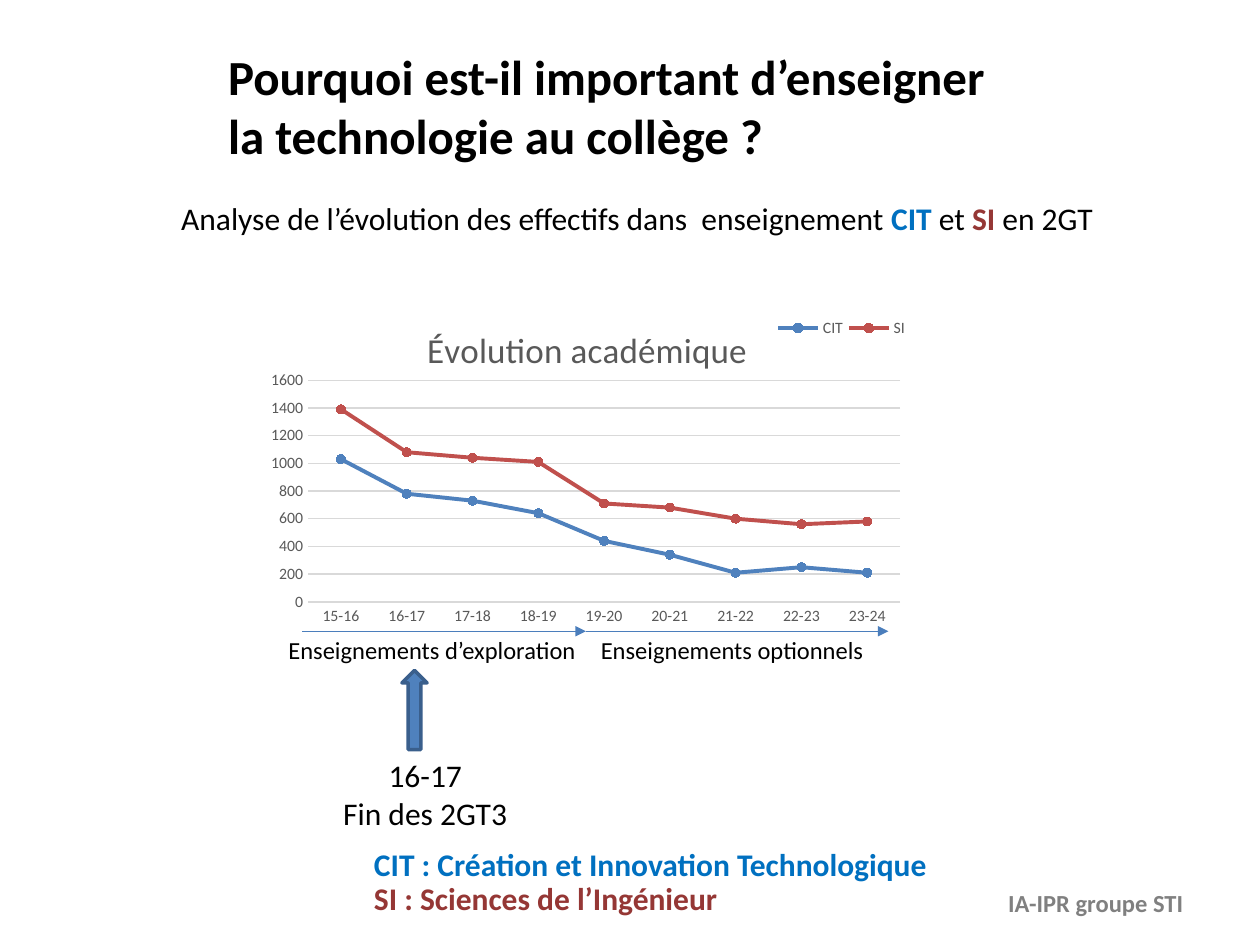
from dataclasses import dataclass

from pptx import Presentation
from pptx import util as u
from pptx.chart.data import CategoryChartData
from pptx.dml.color import RGBColor
from pptx.enum import chart as kinds, shapes, text
from pptx.oxml import parse_xml
from pptx.oxml.ns import nsdecls, qn

COLUMNS, ROWS = 100, 75
CELL = u.Inches(10) // COLUMNS
FONT = "Calibri"
BLACK = RGBColor(0x00, 0x00, 0x00)
GREY = RGBColor(0x80, 0x80, 0x80)
DARK_GREY = RGBColor(0x59, 0x59, 0x59)
LIGHT_GREY = RGBColor(0xD9, 0xD9, 0xD9)
CIT_TEXT = RGBColor(0x00, 0x70, 0xC0)
SI_TEXT = RGBColor(0x95, 0x37, 0x35)
BLUE = RGBColor(0x4F, 0x81, 0xBD)
RED = RGBColor(0xC0, 0x50, 0x4D)
ARROW_EDGE = RGBColor(0x3A, 0x5F, 0x8C)
ARROW_LINE = RGBColor(0x4B, 0x7E, 0xBC)

YEARS = [f"{year}-{year + 1}" for year in range(15, 24)]
SERIES = [
    ("CIT", BLUE, [1030, 780, 730, 640, 440, 340, 210, 250, 210]),
    ("SI", RED, [1390, 1080, 1040, 1010, 710, 680, 600, 560, 580]),
]


@dataclass
class Box:
    left: float
    top: float
    width: float
    height: float

    def inside(self, left, top, width, height):
        return Box(self.left + left, self.top + top, width, height)

    def place(self):
        return [round(cells * CELL) for cells in (self.left, self.top, self.width, self.height)]


def style_font(font, size, color, bold=False):
    font.name = FONT
    font.size = u.Pt(size)
    font.bold = bold
    font.color.rgb = color


def write(frame, paragraphs, size, align=text.PP_ALIGN.LEFT):
    for index, runs in enumerate(paragraphs):
        para = frame.add_paragraph() if index else frame.paragraphs[0]
        para.alignment = align
        for words, color, bold in runs:
            span = para.add_run()
            span.text = words
            style_font(span.font, size, color, bold)


def add_text(page, box, paragraphs, size, align=text.PP_ALIGN.LEFT):
    frame = page.shapes.add_textbox(*box.place()).text_frame
    frame.word_wrap = True
    write(frame, paragraphs, size, align)


def add_heading(page, box):
    title = page.shapes.title
    title.left, title.top, title.width, title.height = box.inside(3.7, 0, 72.4, 10.4).place()
    title.text_frame.auto_size = text.MSO_AUTO_SIZE.NONE
    title.text_frame.vertical_anchor = text.MSO_ANCHOR.TOP
    lines = ["Pourquoi est-il important d’enseigner", "la technologie au collège ?"]
    write(title.text_frame, [[(line, BLACK, True)] for line in lines], 28)
    subtitle = [
        ("Analyse de l’évolution des effectifs dans  enseignement ", BLACK, False),
        ("CIT", CIT_TEXT, True),
        (" et ", BLACK, False),
        ("SI", SI_TEXT, True),
        (" en 2GT", BLACK, False),
    ]
    add_text(page, box.inside(0, 12.1, box.width, 4), [subtitle], 18)


def set_layout(element, box, left, top, width=None, height=None, inner=False):
    shares = {"x": left / box.width, "y": top / box.height}
    if width:
        shares.update(w=width / box.width, h=height / box.height)
    target = '<c:layoutTarget val="inner"/>' if inner else ""
    modes = '<c:xMode val="edge"/><c:yMode val="edge"/>'
    values = "".join(f'<c:{name} val="{share:.4f}"/>' for name, share in shares.items())
    layout = parse_xml(
        f'<c:layout {nsdecls("c")}><c:manualLayout>{target}{modes}{values}</c:manualLayout></c:layout>'
    )
    for old in element.findall(qn("c:layout")):
        element.remove(old)
    before = [qn("c:tx"), qn("c:legendPos")]
    index = sum(child.tag in before for child in element)
    element.insert(index, layout)


def style_axes(chart):
    for axis in (chart.category_axis, chart.value_axis):
        axis.major_tick_mark = kinds.XL_TICK_MARK.NONE
        axis.minor_tick_mark = kinds.XL_TICK_MARK.NONE
        style_font(axis.tick_labels.font, 9, DARK_GREY)
    chart.category_axis.format.line.color.rgb = LIGHT_GREY
    chart.category_axis.format.line.width = u.Pt(0.75)
    values = chart.value_axis
    values.minimum_scale, values.maximum_scale, values.major_unit = 0, 1600, 200
    values.format.line.fill.background()
    values.major_gridlines.format.line.color.rgb = LIGHT_GREY
    values.major_gridlines.format.line.width = u.Pt(0.75)


def style_series(chart):
    for series, (_, color, _) in zip(chart.plots[0].series, SERIES):
        series.smooth = False
        series.format.line.color.rgb = color
        series.format.line.width = u.Pt(2.25)
        marker = series.marker
        marker.style = kinds.XL_MARKER_STYLE.CIRCLE
        marker.size = 5
        marker.format.fill.solid()
        marker.format.fill.fore_color.rgb = color
        marker.format.line.color.rgb = color


def add_trend_chart(page, box):
    data = CategoryChartData()
    data.categories = YEARS
    for name, _, values in SERIES:
        data.add_series(name, values)
    chart = page.shapes.add_chart(kinds.XL_CHART_TYPE.LINE_MARKERS, *box.place(), data).chart
    style_font(chart.font, 10, BLACK)
    chart.plots[0].vary_by_categories = False
    style_axes(chart)
    style_series(chart)
    chart.has_title = True
    write(chart.chart_title.text_frame, [[("Évolution académique", DARK_GREY, False)]], 20,
          text.PP_ALIGN.CENTER)
    chart.has_legend = True
    chart.legend.position = kinds.XL_LEGEND_POSITION.BOTTOM
    chart.legend.include_in_layout = False
    style_font(chart.legend.font, 9, DARK_GREY)
    tree = chart.element.find(qn("c:chart"))
    set_layout(tree.find(qn("c:title")), box, 12.9, 2)
    set_layout(tree.find(qn("c:legend")), box, 40.8, 1.6, 11, 2.3)
    set_layout(tree.find(qn("c:plotArea")), box, 3.95, 6.88, 47, 17.6, inner=True)


def add_period(page, box, label, label_shift, label_width):
    left, top, width, _ = box.place()
    arrow = page.shapes.add_connector(shapes.MSO_CONNECTOR.STRAIGHT, left, top, left + width, top)
    arrow.line.color.rgb = ARROW_LINE
    arrow.line.width = u.Pt(0.75)
    line = arrow.element.spPr.find(qn("a:ln"))
    line.append(parse_xml(f'<a:tailEnd {nsdecls("a")} type="triangle"/>'))
    line.addnext(parse_xml(f'<a:effectLst {nsdecls("a")}/>'))
    add_text(page, box.inside(label_shift, -0.2, label_width, box.height),
             [[(label, BLACK, False)]], 14)


def add_reform(page, box):
    arrow = page.shapes.add_shape(shapes.MSO_SHAPE.UP_ARROW, *box.inside(6.4, 0, 2, 6.3).place())
    arrow.shadow.inherit = False
    arrow.fill.solid()
    arrow.fill.fore_color.rgb = BLUE
    arrow.line.color.rgb = ARROW_EDGE
    arrow.line.width = u.Pt(2)
    lines = [[(line, BLACK, False)] for line in ("16-17", "Fin des 2GT3")]
    add_text(page, box.inside(0, 6.3, box.width, 7.1), lines, 18, text.PP_ALIGN.CENTER)


def add_glossary(page, box):
    entries = [("CIT : Création et Innovation Technologique", CIT_TEXT),
               ("SI : Sciences de l’Ingénieur", SI_TEXT)]
    for index, (entry, color) in enumerate(entries):
        add_text(page, box.inside(0, 2.7 * index, box.width, 4), [[(entry, color, True)]], 18)


def add_footer(page, box):
    add_text(page, box, [[("IA-IPR groupe STI", GREY, True)]], 14, text.PP_ALIGN.RIGHT)


def main():
    deck = Presentation()
    deck.slide_width, deck.slide_height = COLUMNS * CELL, ROWS * CELL
    page = deck.slides.add_slide(deck.slide_layouts[5])
    add_footer(page, Box(64.2, 70, 30.7, 3.4))
    add_heading(page, Box(13.4, 3.2, 84.3, 16.1))
    add_trend_chart(page, Box(20.5, 23.3, 52, 30))
    add_period(page, Box(24, 50.1, 22.5, 3.4), "Enseignements d’exploration", -2.1, 29.6)
    add_period(page, Box(46.5, 50.1, 24, 3.4), "Enseignements optionnels", 0.2, 24)
    add_reform(page, Box(25.5, 53.2, 16.5, 13.4))
    add_glossary(page, Box(28.7, 66.6, 52, 6.7))
    deck.save("out.pptx")


if __name__ == "__main__":
    main()
